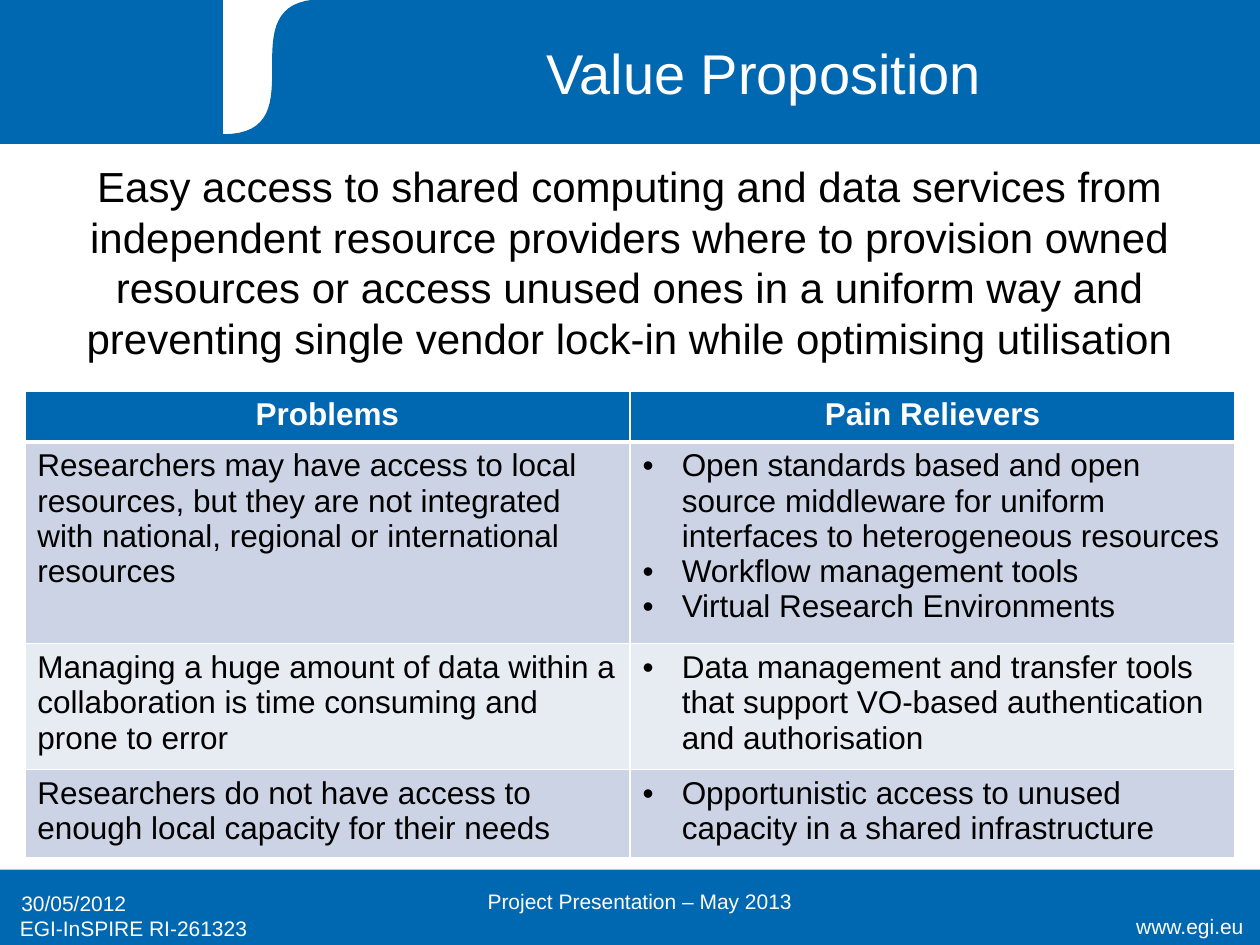
from typing import NamedTuple

from lxml import etree
from pptx import Presentation
from pptx.dml.color import RGBColor
from pptx.enum.shapes import MSO_SHAPE
from pptx.enum.text import MSO_ANCHOR, PP_ALIGN
from pptx.oxml.ns import qn
from pptx.util import Cm, Pt

RECT = MSO_SHAPE.RECTANGLE
LEFT, CENTER, RIGHT = PP_ALIGN.LEFT, PP_ALIGN.CENTER, PP_ALIGN.RIGHT
TOP, MIDDLE = MSO_ANCHOR.TOP, MSO_ANCHOR.MIDDLE

FONT = "Arial"
BLUE, WHITE, BLACK = "0067B1", "FFFFFF", "000000"
BANDS = ("CCD3E4", "E7EBF2")

# Lengths are in centimetres
SLIDE_W, SLIDE_H = 25.4, 19.05
HEADER_H, FOOTER_H = 2.9, 1.52
SWOOSH_LEFT, SWOOSH_RIGHT, SWOOSH_BOTTOM = 4.5, 9.5, 2.72
CURVE_RIGHT, CURVE_STEPS = 6.5, 32
TABLE_LEFT, TABLE_TOP, TABLE_W, ROW_H = 0.5, 7.88, 24.4, 1.03
BULLET_INDENT = 0.79


class Block(NamedTuple):
    left: float
    top: float
    width: float
    height: float
    text: str
    size: int
    color: str = WHITE
    align: PP_ALIGN = LEFT
    anchor: MSO_ANCHOR = TOP
    line_spacing: float = 1.0


class Row(NamedTuple):
    problem: str
    relievers: tuple[str, ...]


BLOCKS = [
    Block(21.31, 18.29, 4.01, 0.79, "www.egi.eu", 12, align=RIGHT),
    Block(0.15, 18.34, 6.35, 0.79, "EGI-InSPIRE RI-261323", 12),
    Block(5.9, 0.33, 19, 2.41, "Value Proposition", 32, align=CENTER,
          anchor=MIDDLE, line_spacing=0.9),
    Block(0.69, 3.12, 24, 4.2,
          "Easy access to shared computing and data services from independent "
          "resource providers where to provision owned resources or access "
          "unused ones in a uniform way and preventing single vendor lock-in "
          "while optimising utilisation", 24, BLACK, CENTER),
    Block(6.7, 17.65, 12.4, 1.02, "Project Presentation – May 2013", 12,
          align=CENTER, anchor=MIDDLE),
    Block(0.18, 17.7, 5.92, 1.02, "30/05/2012", 12, anchor=MIDDLE),
]

HEADINGS = ("Problems", "Pain Relievers")
ROWS = [
    Row("Researchers may have access to local resources, but they are not "
        "integrated with national, regional or international resources",
        ("Open standards based and open source middleware for uniform "
         "interfaces to heterogeneous resources",
         "Workflow management tools",
         "Virtual Research Environments")),
    Row("Managing a huge amount of data within a collaboration is time "
        "consuming and prone to error",
        ("Data management and transfer tools that support VO-based "
         "authentication and authorisation",)),
    Row("Researchers do not have access to enough local capacity for their needs",
        ("Opportunistic access to unused capacity in a shared infrastructure",)),
]


def rgb(value: str) -> RGBColor:
    return RGBColor.from_string(value)


def paint(shape, color: str) -> None:
    shape.shadow.inherit = False
    shape.fill.solid()
    shape.fill.fore_color.rgb = rgb(color)
    shape.line.color.rgb = rgb(color)
    shape.line.width = Pt(0.75)


def add_band(slide, left: float, top: float, width: float, height: float,
             color: str, outlined: bool = True) -> None:
    band = slide.shapes.add_shape(RECT, Cm(left), Cm(top), Cm(width), Cm(height))
    paint(band, color)
    if not outlined:
        band.line.fill.background()


def add_swoosh(slide) -> None:
    """Blue area whose left edge is an S-curve from bottom to top."""
    span = CURVE_RIGHT - SWOOSH_LEFT
    points = [(SWOOSH_RIGHT, SWOOSH_BOTTOM)]
    for step in range(CURVE_STEPS + 1):
        t = step / CURVE_STEPS
        x = SWOOSH_LEFT + span * (3 * t * (1 - t) ** 2 + t ** 3)
        y = SWOOSH_BOTTOM * ((1 - t) ** 3 + 3 * t * (1 - t) ** 2)
        points.append((x, y))
    builder = slide.shapes.build_freeform(Cm(SWOOSH_RIGHT), Cm(0))
    builder.add_line_segments([(Cm(x), Cm(y)) for x, y in points], close=True)
    paint(builder.convert_to_shape(), BLUE)


def style_font(paragraph, size: int, color: str, bold: bool = False) -> None:
    font = paragraph.font
    formats = {"name": FONT, "size": Pt(size), "bold": bold}
    for name, value in formats.items():
        setattr(font, name, value)
    font.color.rgb = rgb(color)


def add_block(slide, block: Block) -> None:
    box = slide.shapes.add_textbox(Cm(block.left), Cm(block.top),
                                   Cm(block.width), Cm(block.height))
    frame = box.text_frame
    frame.word_wrap = True
    frame.vertical_anchor = block.anchor
    paragraph = frame.paragraphs[0]
    paragraph.text = block.text
    paragraph.alignment = block.align
    paragraph.line_spacing = block.line_spacing
    style_font(paragraph, block.size, block.color)


def add_bullet(paragraph) -> None:
    properties = paragraph._p.get_or_add_pPr()
    properties.set("marL", str(Cm(BULLET_INDENT)))
    properties.set("indent", str(-Cm(BULLET_INDENT)))
    etree.SubElement(properties, qn("a:buFont"), typeface=FONT)
    etree.SubElement(properties, qn("a:buChar"), char="•")


def add_borders(cell, widths: dict[str, float]) -> None:
    properties = cell._tc.get_or_add_tcPr()
    for side, width in widths.items():
        line = etree.SubElement(properties, qn(f"a:ln{side}"), w=str(Pt(width)))
        fill = etree.SubElement(line, qn("a:solidFill"))
        etree.SubElement(fill, qn("a:srgbClr"), val=WHITE)


def fill_cell(cell, lines: tuple[str, ...], fill: str, top: float, bottom: float,
              heading: bool = False, bulleted: bool = False) -> None:
    add_borders(cell, {"L": 1, "R": 1, "T": top, "B": bottom})
    cell.fill.solid()
    cell.fill.fore_color.rgb = rgb(fill)
    cell.text = "\n".join(lines)
    for paragraph in cell.text_frame.paragraphs:
        if bulleted:
            add_bullet(paragraph)
        paragraph.alignment = CENTER if heading else LEFT
        style_font(paragraph, 18, WHITE if heading else BLACK, heading)


def add_value_table(slide) -> None:
    row_count = len(ROWS) + 1
    table = slide.shapes.add_table(
        row_count, len(HEADINGS), Cm(TABLE_LEFT), Cm(TABLE_TOP),
        Cm(TABLE_W), Cm(ROW_H * row_count)).table
    for column, heading in enumerate(HEADINGS):
        fill_cell(table.cell(0, column), (heading,), BLUE, 1, 3, heading=True)
    for number, row in enumerate(ROWS, start=1):
        band = BANDS[(number - 1) % 2]
        top = 3 if number == 1 else 1
        fill_cell(table.cell(number, 0), (row.problem,), band, top, 1)
        fill_cell(table.cell(number, 1), row.relievers, band, top, 1, bulleted=True)


def main() -> None:
    deck = Presentation()
    deck.slide_width, deck.slide_height = Cm(SLIDE_W), Cm(SLIDE_H)
    slide = deck.slides.add_slide(deck.slide_layouts[6])

    # Footer and header bands
    add_band(slide, 0, SLIDE_H - FOOTER_H, SLIDE_W, FOOTER_H, BLUE, outlined=False)
    add_band(slide, 0, 0, SLIDE_W, HEADER_H, BLUE)
    add_band(slide, SWOOSH_LEFT, 0, SWOOSH_RIGHT - SWOOSH_LEFT, SWOOSH_BOTTOM, WHITE)
    add_swoosh(slide)

    # Title, statement and footer texts
    for block in BLOCKS:
        add_block(slide, block)

    # Problems and pain relievers
    add_value_table(slide)
    deck.save("out.pptx")


if __name__ == "__main__":
    main()
